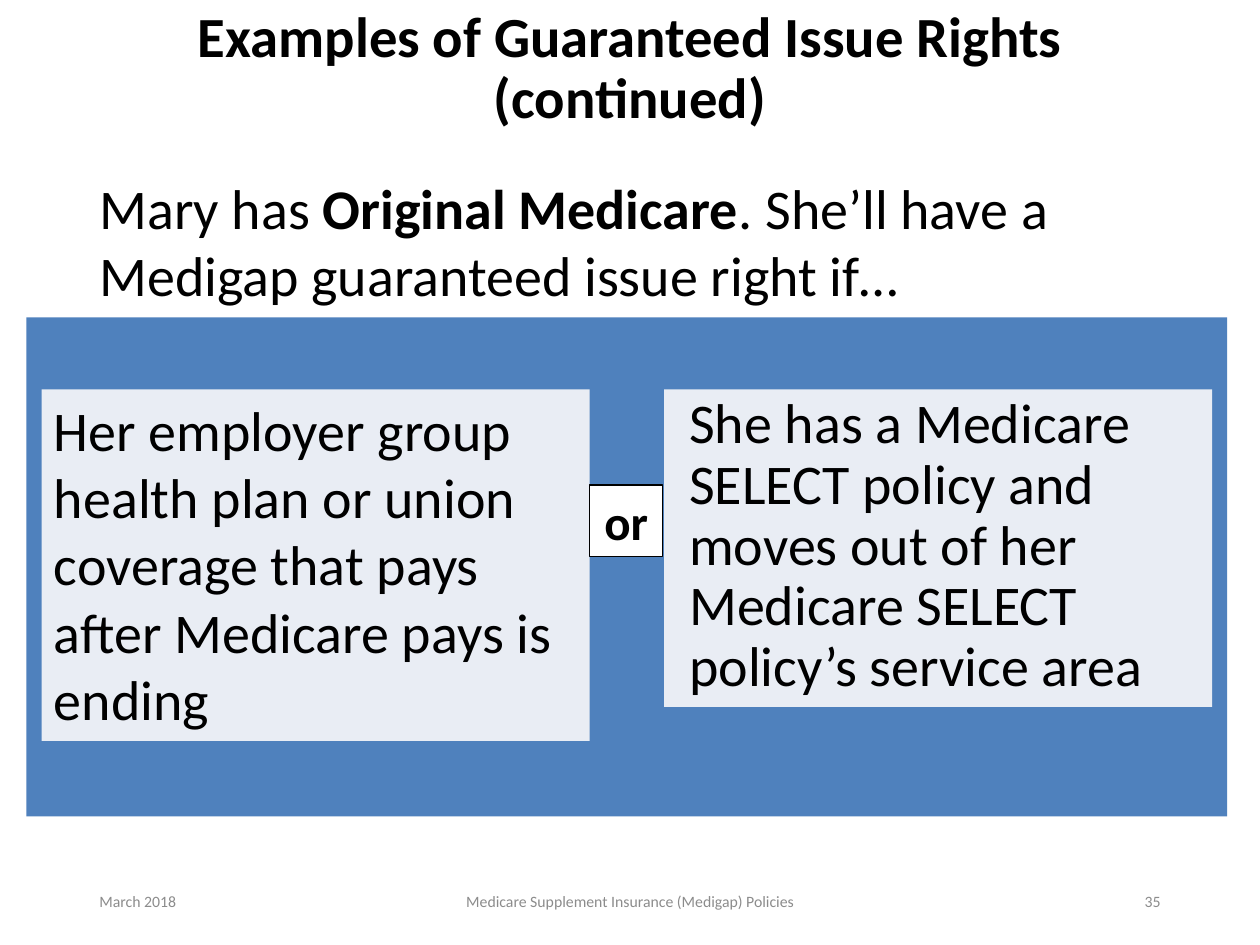
"""Build the slide of guaranteed issue right examples."""
import pptx
import pptx.util
import pptx.dml.color
import pptx.enum.shapes
import pptx.enum.text

Inches, Pt = pptx.util.Inches, pptx.util.Pt
RGBColor = pptx.dml.color.RGBColor
ALIGN = pptx.enum.text.PP_ALIGN
ANCHOR = pptx.enum.text.MSO_ANCHOR
FIT = pptx.enum.text.MSO_AUTO_SIZE

BLACK = RGBColor(0x00, 0x00, 0x00)
WHITE = RGBColor(0xFF, 0xFF, 0xFF)
BLUE = RGBColor(0x4F, 0x81, 0xBD)
PALE = RGBColor(0xE9, 0xED, 0xF4)
GRAY = RGBColor(0x8C, 0x8C, 0x8C)

TITLE = "Examples of Guaranteed Issue Rights (continued)"
INTRO = [
    ("Mary has ", False),
    ("Original Medicare", True),
    (". She’ll have a Medigap guaranteed issue right if…", False),
]
EMPLOYER = "Her employer group health plan or union coverage that pays after Medicare pays is ending"
SELECT = "She has a Medicare SELECT policy and moves out of her Medicare SELECT policy’s service area"
PANELS = [
    ((0.33, 3.09, 4.35, 2.79), EMPLOYER, PALE, None, {}, {"size": Pt(32)}),
    ((5.27, 3.09, 4.35, 2.52), SELECT, PALE, None, {"line_spacing": 0.9}, {"size": Pt(32)}),
    ((4.68, 3.85, 0.58, 0.57), "or", WHITE, BLACK,
     {"alignment": ALIGN.CENTER}, {"size": Pt(28), "bold": True}),
]
SELECT_INDENT = 0.1
FOOTERS = [
    (0.69, 2.25, "March 2018", ALIGN.LEFT),
    (3.31, 3.38, "Medicare Supplement Insurance (Medigap) Policies", ALIGN.CENTER),
    (7.06, 2.25, "35", ALIGN.RIGHT),
]


def apply(target, values):
    """Set each named attribute on the target."""
    for name, value in values.items():
        setattr(target, name, value)


def write(shape, runs, paragraph_format, font, color=BLACK, anchor=ANCHOR.TOP, fit=FIT.NONE):
    """Fill a shape with one formatted paragraph of (text, bold) runs."""
    frame = shape.text_frame
    apply(frame, {"word_wrap": True, "auto_size": fit, "vertical_anchor": anchor})
    paragraph = frame.paragraphs[0]
    apply(paragraph, {"alignment": ALIGN.LEFT, **paragraph_format})
    for text, bold in runs:
        run = paragraph.add_run()
        run.text = text
        apply(run.font, {"name": "Calibri", "bold": bold, **font})
        run.font.color.rgb = color


def add_box(slide, box, fill, line=None):
    """Add a flat rectangle."""
    rectangle = slide.shapes.add_shape(
        pptx.enum.shapes.MSO_SHAPE.RECTANGLE, *map(Inches, box))
    rectangle.shadow.inherit = False
    rectangle.fill.solid()
    rectangle.fill.fore_color.rgb = fill
    if line is None:
        rectangle.line.fill.background()
    else:
        rectangle.line.color.rgb = line
        rectangle.line.width = Pt(0.75)
    return rectangle


def main():
    """Lay out the slide and save it."""
    deck = pptx.Presentation()
    deck.slide_width, deck.slide_height = Inches(10), Inches(7.5)
    slide = deck.slides.add_slide(deck.slide_layouts[5])

    title = slide.shapes.title
    apply(title, {"left": Inches(0.69), "top": Inches(0),
                  "width": Inches(8.62), "height": Inches(1.11)})
    write(title, [(TITLE, True)], {"alignment": ALIGN.CENTER, "line_spacing": 0.9},
          {"size": Pt(32.4)}, anchor=ANCHOR.MIDDLE)

    intro = slide.shapes.add_textbox(*map(Inches, (0.69, 1.33, 8.62, 1.2)))
    write(intro, INTRO, {}, {"size": Pt(32)})

    add_box(slide, (0.21, 2.52, 9.53, 3.96), BLUE)
    for box, text, fill, line, paragraph_format, font in PANELS:
        panel = add_box(slide, box, fill, line)
        write(panel, [(text, False)], paragraph_format, font, fit=FIT.SHAPE_TO_FIT_TEXT)
        if text == SELECT:
            panel.text_frame.margin_left = Inches(0.1 + SELECT_INDENT)

    for left, width, text, alignment in FOOTERS:
        footer = slide.shapes.add_textbox(*map(Inches, (left, 6.95, width, 0.4)))
        write(footer, [(text, False)], {"alignment": alignment}, {"size": Pt(9)},
              GRAY, ANCHOR.MIDDLE)

    deck.save("out.pptx")


if __name__ == "__main__":
    main()
